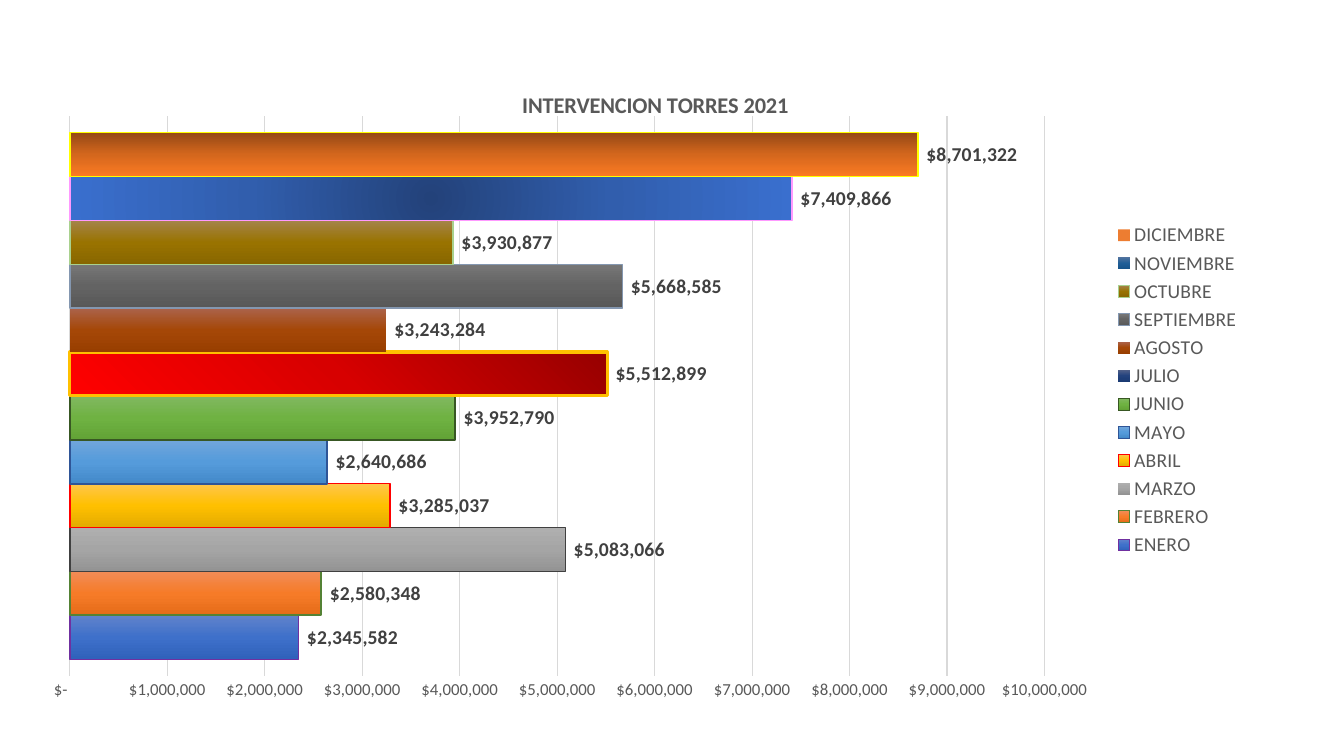
import pptx
import pptx.chart.data
import pptx.dml.color
import pptx.enum.chart
import pptx.oxml
import pptx.oxml.ns
import pptx.util
from pptx.util import Inches

COLORS = {"text": "595959", "label": "404040", "grid": "D9D9D9"}
MONEY = r'_("$"* #,##0_);_("$"* \(#,##0\);_("$"* "-"??_);_(@_)'
DOWN, DIAGONAL = '<a:lin ang="5400000" scaled="0"/>', '<a:lin ang="8100000" scaled="0"/>'
RADIAL = ('<a:path path="circle"><a:fillToRect l="50000" t="50000" '
          'r="50000" b="50000"/></a:path>')

# month, value, gradient colours, outline (colour, width)
MONTHS = [
    ("ENERO", 2345582, "6183CB 3E70CA 3062BB", ("7030A0", 1)),
    ("FEBRERO", 2580348, "F18C57 F67B28 E56C19", ("548235", 1.5)),
    ("MARZO", 5083066, "AFAFAF A5A5A5 939393", None),
    ("ABRIL", 3285037, "FFC64B FFC000 E3AB00", ("FF0000", 1)),
    ("MAYO", 2640686, "71A6DB 559BDB 448ACA", ("2F5597", 1.5)),
    ("JUNIO", 3952790, "81B861 6FB242 62A336", ("385723", 1.5)),
    ("JULIO", 5512899, "516089 22427D 1A3A72", None),
    ("AGOSTO", 3243284, "AB634B A54707 983E00", None),
    ("SEPTIEMBRE", 5668585, "777777 636363 585858", ("8497B0", 1)),
    ("OCTUBRE", 3930877, "A4844B 997300 886600", ("A9D18E", 1)),
    ("NOVIEMBRE", 7409866, "51739F 205E97 17548B", None),
    ("DICIEMBRE", 8701322, "ED7D31", None),
]
# bars that differ from their legend key: gradient colours, direction, outline
BARS = {
    "MARZO": ("AFAFAF A5A5A5 939393", DOWN, ("404040", 1)),
    "JULIO": ("970000 D70000 FF0000", DIAGONAL, ("FFC000", 2.25)),
    "NOVIEMBRE": ("23427A 315EAD 3A6FCE", RADIAL, ("FF99FF", 1)),
    "DICIEMBRE": ("954815 D4671D FB7A23", DOWN, ("FFFF00", 1)),
}


def rgb(color):
    return pptx.dml.color.RGBColor.from_string(color)


def set_font(font, size, color, bold=False):
    values = {"name": "Calibri", "size": pptx.util.Pt(size), "bold": bold}
    for name, value in values.items():
        setattr(font, name, value)
    font.color.rgb = rgb(color)


def set_line(line, outline):
    if outline is None:
        line.fill.background()
        return
    color, width = outline
    line.color.rgb = rgb(color)
    line.width = pptx.util.Pt(width)


def paint(fmt, parent, colors, direction, outline):
    """Outline and fill a series or point, whose XML element is parent."""
    set_line(fmt.line, outline)
    colors = colors.split()
    if len(colors) == 1:
        fmt.fill.solid()
        fmt.fill.fore_color.rgb = rgb(colors[0])
        return
    stops = "".join(f'<a:gs pos="{i * 50000}"><a:srgbClr val="{color}"/></a:gs>'
                    for i, color in enumerate(colors))
    parent.find(pptx.oxml.ns.qn("c:spPr")).insert(0, pptx.oxml.parse_xml(
        f'<a:gradFill {pptx.oxml.ns.nsdecls("a")} rotWithShape="1">'
        f'<a:gsLst>{stops}</a:gsLst>{direction}</a:gradFill>'))


def place(element, index, **values):
    """Give a chart part a manual layout, in fractions of the chart."""
    for old in element.findall(pptx.oxml.ns.qn("c:layout")):
        element.remove(old)
    tags = "".join(f'<c:{tag} val="{value}"/>' for tag, value in values.items())
    element.insert(index, pptx.oxml.parse_xml(
        f'<c:layout {pptx.oxml.ns.nsdecls("c")}><c:manualLayout>{tags}'
        '</c:manualLayout></c:layout>'))


class Deck:
    def __init__(self):
        self.prs = pptx.Presentation()
        self.prs.slide_width, self.prs.slide_height = Inches(13.33), Inches(7.5)
        self.s = self.prs.slides.add_slide(self.prs.slide_layouts[6])

    def bar_chart(self, x, y, w, h):
        data = pptx.chart.data.CategoryChartData(number_format=MONEY)
        data.categories = ["1"]
        for month, value, *_ in MONTHS:
            data.add_series(month, [value])
        chart = self.s.shapes.add_chart(
            pptx.enum.chart.XL_CHART_TYPE.BAR_CLUSTERED,
            Inches(x), Inches(y), Inches(w), Inches(h), data).chart
        set_font(chart.font, 10, "000000")
        plot = chart.plots[0]
        plot.gap_width = 75
        plot.vary_by_categories = False
        for series, (month, _, colors, outline) in zip(plot.series, MONTHS):
            self.month_bar(series, month, colors, outline)
        place(chart._chartSpace.chart.plotArea, 0, layoutTarget="inner",
              xMode="edge", yMode="edge", x=0.017, y=0.082, w=0.811, h=0.854)
        return chart

    def month_bar(self, series, month, colors, outline):
        ser = series._element
        paint(series.format, ser, colors, DOWN, outline)
        if month in BARS:
            fmt = series.points[0].format
            paint(fmt, ser.find(pptx.oxml.ns.qn("c:dPt")), *BARS[month])
        labels = series.data_labels
        values = {"show_value": True, "number_format": MONEY,
                  "number_format_is_linked": False,
                  "position": pptx.enum.chart.XL_LABEL_POSITION.OUTSIDE_END}
        for name, setting in values.items():
            setattr(labels, name, setting)
        set_font(labels.font, 14, COLORS["label"], True)

    def title(self, chart, text):
        chart.has_title = True
        p = chart.chart_title.text_frame.paragraphs[0]
        r = p.add_run()
        r.text = text
        set_font(r.font, 16, COLORS["text"], True)
        place(chart.chart_title._element, 1, xMode="edge", yMode="edge",
              x=0.39, y=0.035)

    def axes(self, chart):
        chart.category_axis.visible = False
        axis = chart.value_axis
        values = {"minimum_scale": 0, "maximum_scale": 10_000_000,
                  "major_unit": 1_000_000, "has_major_gridlines": True,
                  "major_tick_mark": pptx.enum.chart.XL_TICK_MARK.NONE}
        for name, value in values.items():
            setattr(axis, name, value)
        set_line(axis.format.line, None)
        set_line(axis.major_gridlines.format.line, (COLORS["grid"], 0.75))
        axis.tick_labels.number_format = MONEY
        axis.tick_labels.number_format_is_linked = False
        set_font(axis.tick_labels.font, 12, COLORS["text"])

    def legend(self, chart):
        chart.has_legend = True
        chart.legend.position = pptx.enum.chart.XL_LEGEND_POSITION.RIGHT
        chart.legend.include_in_layout = False
        set_font(chart.legend.font, 14, COLORS["text"])


def main():
    deck = Deck()
    chart = deck.bar_chart(0.49, 0.62, 11.92, 6.5)
    deck.title(chart, "INTERVENCION TORRES 2021")
    deck.axes(chart)
    deck.legend(chart)
    deck.prs.save("out.pptx")


if __name__ == "__main__":
    main()
